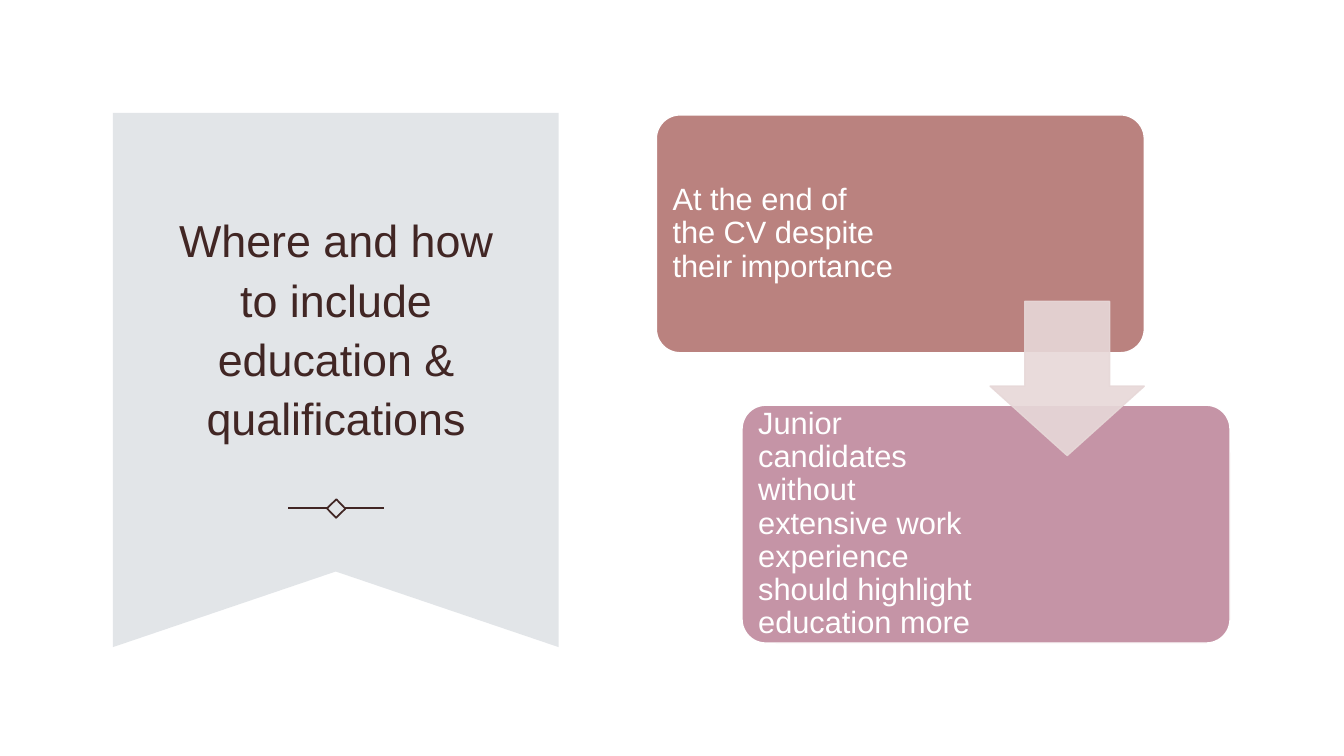
import lxml.etree
import pptx
import pptx.util
import pptx.dml.color
import pptx.enum.shapes
import pptx.enum.text
import pptx.oxml.ns

PX = 9144  # 100 px to the inch
FONT = "Arial"
WHITE = pptx.dml.color.RGBColor(0xFF, 0xFF, 0xFF)
PALE_GREY = pptx.dml.color.RGBColor(0xE2, 0xE5, 0xE8)
DARK_BROWN = pptx.dml.color.RGBColor(0x41, 0x26, 0x24)
ROSE = pptx.dml.color.RGBColor(0xBA, 0x82, 0x7F)
MAUVE = pptx.dml.color.RGBColor(0xC5, 0x94, 0xA6)
BLUSH = pptx.dml.color.RGBColor(0xE7, 0xD8, 0xD8)
SHAPE = pptx.enum.shapes.MSO_SHAPE


def add_shape(kind, left, top, width, height, fill, line, weight):
    shape = slide.shapes.add_shape(kind, left * PX, top * PX, width * PX, height * PX)
    shape.shadow.inherit = False
    if fill is None:
        shape.fill.background()
    else:
        shape.fill.solid()
        shape.fill.fore_color.rgb = fill
    shape.line.color.rgb = line
    shape.line.width = pptx.util.Pt(weight)
    return shape


def write(frame, text, size, color, spacing, align):
    frame.text = text
    frame.word_wrap = True
    frame.auto_size = pptx.enum.text.MSO_AUTO_SIZE.NONE
    frame.vertical_anchor = pptx.enum.text.MSO_ANCHOR.MIDDLE
    paragraph = frame.paragraphs[0]
    paragraph.alignment = align
    paragraph.line_spacing = spacing
    font = paragraph.runs[0].font
    font.name = FONT
    font.size = pptx.util.Pt(size)
    font.color.rgb = color


presentation = pptx.Presentation()
presentation.slide_width = 1333 * PX
presentation.slide_height = 750 * PX
slide = presentation.slides.add_slide(presentation.slide_layouts[5])
slide.background.fill.solid()
slide.background.fill.fore_color.rgb = WHITE

# Ribbon behind the title
outline = slide.shapes.build_freeform(112, 112, scale=PX)
outline.add_line_segments([(554, 112), (554, 642), (333, 567), (112, 642)], close=True)
ribbon = outline.convert_to_shape()
ribbon.shadow.inherit = False
ribbon.fill.solid()
ribbon.fill.fore_color.rgb = PALE_GREY
ribbon.line.fill.background()

# Title, brought in front of the ribbon
title = slide.shapes.title
title.left, title.top, title.width, title.height = 156 * PX, 181 * PX, 355 * PX, 285 * PX
write(title.text_frame, "Where and how to include education & qualifications",
      32, DARK_BROWN, 1.1, pptx.enum.text.PP_ALIGN.CENTER)
ribbon.element.addnext(title.element)

# Ornament: a diamond between two rules
diamond = add_shape(SHAPE.RECTANGLE, 327, 498, 13, 13, None, DARK_BROWN, 1.25)
diamond.rotation = 316
for start, end in ((342, 381), (286, 324)):
    rule = slide.shapes.add_connector(pptx.enum.shapes.MSO_CONNECTOR.STRAIGHT,
                                      start * PX, 504 * PX, end * PX, 504 * PX)
    rule.line.color.rgb = DARK_BROWN
    rule.line.width = pptx.util.Pt(1.25)
    lxml.etree.SubElement(rule.element.spPr, pptx.oxml.ns.qn("a:effectLst"))

# Two stepped cards, each with its own advice
cards = [
    (651, 114, 241, ROSE, "At the end of the CV despite their importance"),
    (736, 402, 232, MAUVE, "Junior candidates without extensive work experience "
                           "should highlight education more"),
]
for left, top, text_width, color, advice in cards:
    card = add_shape(SHAPE.ROUNDED_RECTANGLE, left, top, 484, 236, color, WHITE, 1)
    card.adjustments[0] = 0.1
    label = slide.shapes.add_textbox((left + 7) * PX, (top + 7) * PX,
                                     text_width * PX, 222 * PX)
    frame = label.text_frame
    frame.margin_left = frame.margin_right = 9 * PX
    frame.margin_top = frame.margin_bottom = 9 * PX
    write(frame, advice, 22, WHITE, 0.9, pptx.enum.text.PP_ALIGN.LEFT)

# Translucent arrow from the first card to the second
arrow = add_shape(SHAPE.DOWN_ARROW, 982, 299, 153, 153, BLUSH, BLUSH, 1)
arrow.adjustments[0] = 0.55
arrow.adjustments[1] = 0.45
for tone in arrow.element.spPr.iter(pptx.oxml.ns.qn("a:srgbClr")):
    lxml.etree.SubElement(tone, pptx.oxml.ns.qn("a:alpha"), val="90000")

presentation.save("out.pptx")
